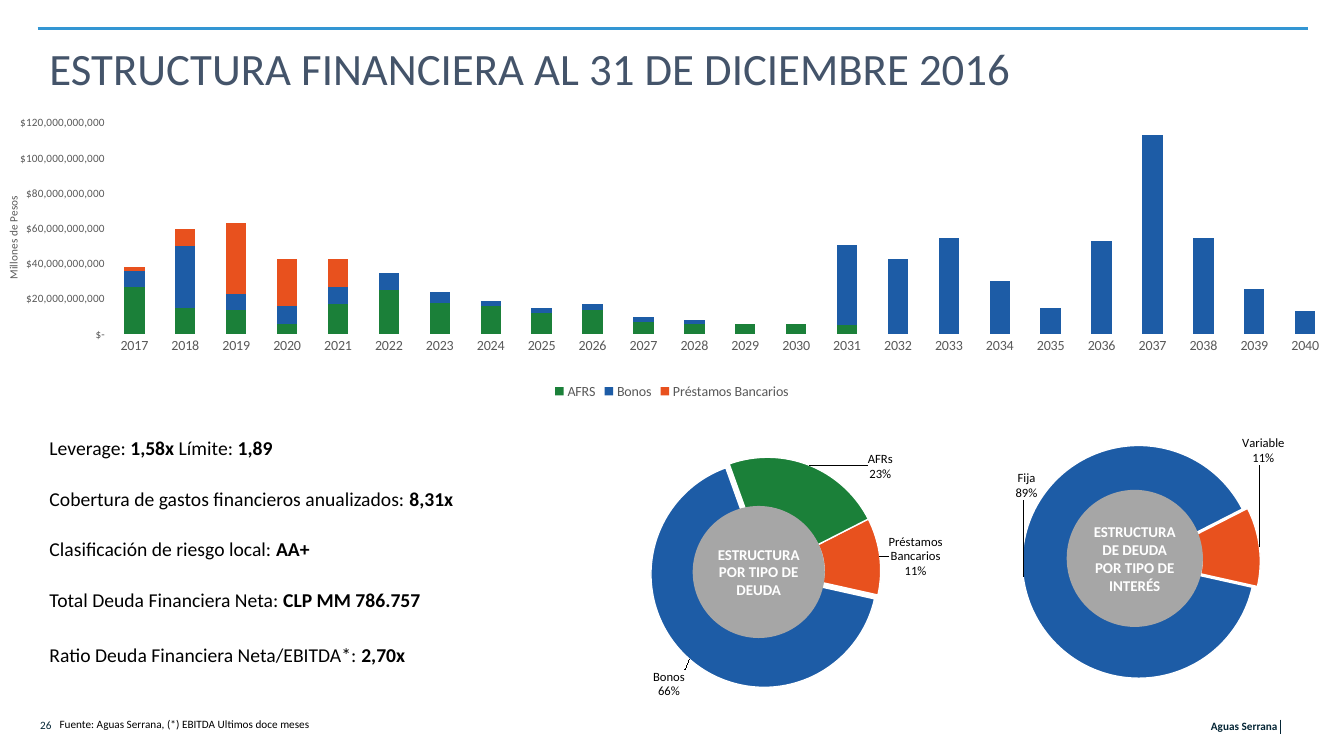
from dataclasses import dataclass

from pptx import Presentation
from pptx.chart.data import CategoryChartData
from pptx.dml.color import RGBColor
from pptx.enum.chart import XL_CHART_TYPE, XL_LEGEND_POSITION, XL_TICK_MARK
from pptx.enum.shapes import MSO_CONNECTOR, MSO_SHAPE
from pptx.enum.text import MSO_ANCHOR, MSO_AUTO_SIZE, PP_ALIGN
from pptx.oxml import parse_xml
from pptx.oxml.ns import nsdecls, qn
from pptx.util import Inches, Pt

LEFT, MID, RIGHT = PP_ALIGN.LEFT, PP_ALIGN.CENTER, PP_ALIGN.RIGHT
STACK, RING = XL_CHART_TYPE.COLUMN_STACKED, XL_CHART_TYPE.DOUGHNUT
NO_TICK, BOTTOM = XL_TICK_MARK.NONE, XL_LEGEND_POSITION.BOTTOM


@dataclass(frozen=True)
class Theme:
    font: str = "Calibri"
    ink: str = "000000"
    white: str = "FFFFFF"
    navy: str = "042535"
    slate: str = "44546A"
    sky: str = "3396D3"
    text: str = "595959"
    grey: str = "A6A6A6"
    green: str = "1B8039"
    blue: str = "1D5CA6"
    red: str = "E8511E"
    head: float = 32
    body: float = 14
    hub: float = 10.7
    axis: float = 10
    label: float = 9
    small: float = 8


THEME = Theme()


def style(font, size, color, bold=False):
    font.name, font.size, font.bold = THEME.font, Pt(size), bold
    font.color.rgb = RGBColor.from_string(color)


def write(para, text, size=THEME.small, color=THEME.ink, bold=False, align=LEFT):
    """Add one formatted run to a paragraph."""
    para.alignment = align
    run = para.add_run()
    run.text = text
    style(run.font, size, color, bold)


def layout(x, y, w=None, h=None, inner=False):
    """Build a manual chart layout from shares of the chart's size."""
    parts = '<c:layoutTarget val="inner"/>' if inner else ""
    if inner or w == 0:
        parts += '<c:xMode val="edge"/><c:yMode val="edge"/>'
    parts += f'<c:x val="{x}"/><c:y val="{y}"/>'
    if inner:
        parts += f'<c:w val="{w}"/><c:h val="{h}"/>'
    return f'<c:layout {nsdecls("c")}><c:manualLayout>{parts}</c:manualLayout></c:layout>'


class Board:
    """Holds the slide; every length is a percentage of its size."""

    def __init__(self, deck, theme):
        self.wide, self.high, self.theme = deck.slide_width, deck.slide_height, theme
        self.slide = deck.slides.add_slide(deck.slide_layouts[1])
        self.shapes = self.slide.shapes

    def box(self, x, y, w, h):
        return (int(self.wide * x / 100), int(self.high * y / 100),
                int(self.wide * w / 100), int(self.high * h / 100))

    def hold(self, shape, area):
        """Move a placeholder and return its text frame."""
        shape.left, shape.top, shape.width, shape.height = self.box(*area)
        shape.text_frame.auto_size = MSO_AUTO_SIZE.NONE
        return shape.text_frame

    def title(self, area, text):
        frame = self.hold(self.shapes.title, area)
        frame.vertical_anchor = MSO_ANCHOR.MIDDLE
        write(frame.paragraphs[0], text, size=self.theme.head, color=self.theme.slate)

    def facts(self, area, rows):
        frame = self.hold(self.slide.placeholders[1], area)
        bounds = frame.paragraphs[0]._p.getparent().find(qn("a:bodyPr"))
        bounds.set("numCol", "2")
        bounds.set("spcCol", str(Inches(0.39)))
        for n, (gap, *pieces) in enumerate(rows):
            para = frame.add_paragraph() if n else frame.paragraphs[0]
            props = para._p.get_or_add_pPr()
            props.set("marL", "0")
            props.set("indent", "0")
            props.append(parse_xml(f'<a:buNone {nsdecls("a")}/>'))
            para.space_before = Pt(gap)
            for k, piece in enumerate(pieces):
                write(para, piece, size=self.theme.body, bold=k % 2 == 1)

    def note(self, area, text, inset=0.1, **look):
        frame = self.shapes.add_textbox(*self.box(*area)).text_frame
        frame.word_wrap, frame.vertical_anchor = True, MSO_ANCHOR.MIDDLE
        frame.margin_left = frame.margin_right = Inches(inset)
        write(frame.paragraphs[0], text, **look)

    def line(self, x1, y1, x2, y2, color, width):
        rule = self.shapes.add_connector(MSO_CONNECTOR.STRAIGHT, *self.box(x1, y1, x2, y2))
        rule.line.color.rgb = RGBColor.from_string(color)
        rule.line.width = Pt(width)
        rule._element.spPr.append(parse_xml(f'<a:effectLst {nsdecls("a")}/>'))

    def hub(self, area, text):
        disc = self.shapes.add_shape(MSO_SHAPE.OVAL, *self.box(*area))
        disc.shadow.inherit = False
        disc.fill.solid()
        disc.fill.fore_color.rgb = RGBColor.from_string(self.theme.grey)
        disc.line.fill.background()
        frame = disc.text_frame
        frame.word_wrap, frame.vertical_anchor = True, MSO_ANCHOR.MIDDLE
        frame.margin_left = frame.margin_right = Inches(0.05)
        frame.margin_top = frame.margin_bottom = Inches(0.05)
        write(frame.paragraphs[0], text, size=self.theme.hub, color=self.theme.white,
              bold=True, align=MID)

    def chart(self, kind, area, cats, series, plot):
        data = CategoryChartData()
        data.categories = cats
        for name, vals in series:
            data.add_series(name, vals)
        chart = self.shapes.add_chart(kind, *self.box(*area), data).chart
        chart.has_title = chart.has_legend = False
        style(chart.font, self.theme.axis, self.theme.ink)
        zone = chart.element.find(".//" + qn("c:plotArea"))
        for old in zone.findall(qn("c:layout")):
            zone.remove(old)
        zone.insert(0, parse_xml(layout(*plot, inner=True)))
        return chart

    def bars(self, area, cats, series, colors, plot, name):
        look = self.theme
        chart = self.chart(STACK, area, cats, series, plot)
        chart.plots[0].gap_width, chart.plots[0].overlap = 150, 100
        for item, color in zip(chart.plots[0].series, colors):
            item.format.fill.solid()
            item.format.fill.fore_color.rgb = RGBColor.from_string(color)
        for axis, size in ((chart.category_axis, look.axis), (chart.value_axis, look.small)):
            axis.has_major_gridlines = False
            axis.major_tick_mark = axis.minor_tick_mark = NO_TICK
            axis.format.line.fill.background()
            style(axis.tick_labels.font, size, look.text)
        axis = chart.value_axis
        axis.minimum_scale, axis.maximum_scale, axis.major_unit = 0, 120e9, 20e9
        axis.tick_labels.number_format = '"$"#,##0;;"$-"'
        axis.tick_labels.number_format_is_linked = False
        write(axis.axis_title.text_frame.paragraphs[0], name, color=look.text, align=MID)
        head = axis.axis_title._element
        for old in head.findall(qn("c:layout")):
            head.remove(old)
        head.find(qn("c:tx")).addnext(parse_xml(layout(0.005, 0.29, 0)))
        chart.has_legend = True
        chart.legend.position, chart.legend.include_in_layout = BOTTOM, False
        style(chart.legend.font, look.axis, look.text)

    def ring(self, area, parts, plot):
        """Parts are (name, share, color, label shift); Bonos and Fija stand out."""
        look = self.theme
        names, shares, colors, shifts = zip(*parts)
        chart = self.chart(RING, area, names, [("Series 1", shares)], plot)
        chart.element.find(".//" + qn("c:firstSliceAng")).set("val", "63")
        for n, color in enumerate(colors):
            form = chart.plots[0].series[0].points[n].format
            form.fill.solid()
            form.fill.fore_color.rgb = RGBColor.from_string(color)
            form.line.color.rgb = RGBColor.from_string(look.white)
            form.line.width = Pt(1)
        row = chart.element.find(".//" + qn("c:ser"))
        for spot in row.findall(qn("c:dPt")):
            if spot.find(qn("c:idx")).get("val") == "1":
                push = parse_xml(f'<c:explosion {nsdecls("c")} val="9"/>')
                spot.find(qn("c:spPr")).addprevious(push)
        # Labels with leader lines
        show = "".join(f'<c:show{key} val="{val}"/>' for key, val in (
            ("LegendKey", 0), ("Val", 1), ("CatName", 1), ("SerName", 0),
            ("Percent", 0), ("BubbleSize", 0))) + "<c:separator>\n</c:separator>"
        form = ('<c:numFmt formatCode="0%" sourceLinked="0"/><c:spPr><a:noFill/></c:spPr>'
                f'<c:txPr><a:bodyPr/><a:p><a:pPr><a:defRPr sz="{look.label * 100}"><a:solidFill>'
                f'<a:srgbClr val="{look.ink}"/></a:solidFill><a:latin typeface="{look.font}"/>'
                '</a:defRPr></a:pPr><a:endParaRPr/></a:p></c:txPr>')
        each = "".join(f'<c:dLbl><c:idx val="{n}"/>{layout(*shift)}{form}{show}</c:dLbl>'
                       for n, shift in enumerate(shifts))
        tags = parse_xml(f'<c:dLbls {nsdecls("c", "a")}>{each}{form}{show}'
                         '<c:showLeaderLines val="1"/></c:dLbls>')
        row.find(qn("c:cat")).addprevious(tags)


def main():
    deck = Presentation()
    deck.slide_width, deck.slide_height = Inches(13.33), Inches(7.5)
    look, board = THEME, Board(deck, THEME)

    # Frame and footer
    board.line(2.8, 3.75, 97.3, 3.75, look.sky, 2)
    board.line(95.27, 95.2, 95.27, 97.1, look.navy, 0.5)
    board.note((78.9, 94, 16.9, 4), "Aguas Serrana", color=look.navy, bold=True, align=RIGHT)
    board.note((2.25, 93.9, 16.9, 4), "26", color=look.navy)
    board.note((3.38, 94, 55.14, 3.6), inset=0.14,
               text="Fuente: Aguas Serrana, (*) EBITDA Ultimos doce meses")

    # Title and key figures
    board.title((2.93, 4.13, 94.3, 9.6), "ESTRUCTURA FINANCIERA AL 31 DE DICIEMBRE 2016")
    board.facts((2.93, 57, 94.3, 37.73), [
        (0, "Leverage: ", "1,58x ", "Límite:", " 1,89"),
        (19.4, "Cobertura de gastos financieros anualizados: ", "8,31x"),
        (19.4, "Clasificación de riesgo local: ", "AA+"),
        (19.4, "Total Deuda Financiera Neta: ", "CLP MM 786.757"),
        (22.2, "Ratio Deuda Financiera Neta/EBITDA*: ", "2,70x")])

    # Maturities by year, in thousands of millions
    debt = {
        "AFRS": [27, 15, 14, 6, 17, 25, 18, 16, 12, 14, 7, 6, 6, 6, 5] + [None] * 9,
        "Bonos": [9, 35, 9, 10, 10, 10, 6, 3, 3, 3, 3, 2, None, None,
                  46, 43, 55, 30, 15, 53, 113, 55, 26, 13],
        "Préstamos Bancarios": [2, 10, 40, 27, 16] + [None] * 19}
    series = [(name, [v and v * 10**9 for v in vals]) for name, vals in debt.items()]
    board.bars((-0.23, 14.27, 100.45, 39.07), [str(y) for y in range(2017, 2041)], series,
               (look.green, look.blue, look.red), (0.083, 0.052, 0.905, 0.715),
               "Millones de Pesos")

    # Debt by type and by interest
    board.ring((47.34, 54, 26.41, 41.07), [
        ("Préstamos Bancarios", 0.11, look.red, (0.18, -0.01)),
        ("Bonos", 0.66, look.blue, (-0.11, 0.15)),
        ("AFRs", 0.23, look.green, (0.23, -0.08))], (0.051, 0.158, 0.638, 0.729))
    board.hub((51.54, 66.93, 9.83, 17.47), "ESTRUCTURA POR TIPO DE DEUDA")
    board.ring((71.94, 52.53, 27.16, 42.53), [
        ("Variable", 0.11, look.red, (0.09, -0.31)),
        ("Fija", 0.89, look.blue, (-0.07, -0.27))], (0.166, 0.146, 0.638, 0.729))
    board.hub((79.37, 64.8, 10.13, 18.13), "ESTRUCTURA DE DEUDA POR TIPO DE INTERÉS")

    deck.save("out.pptx")


if __name__ == "__main__":
    main()
